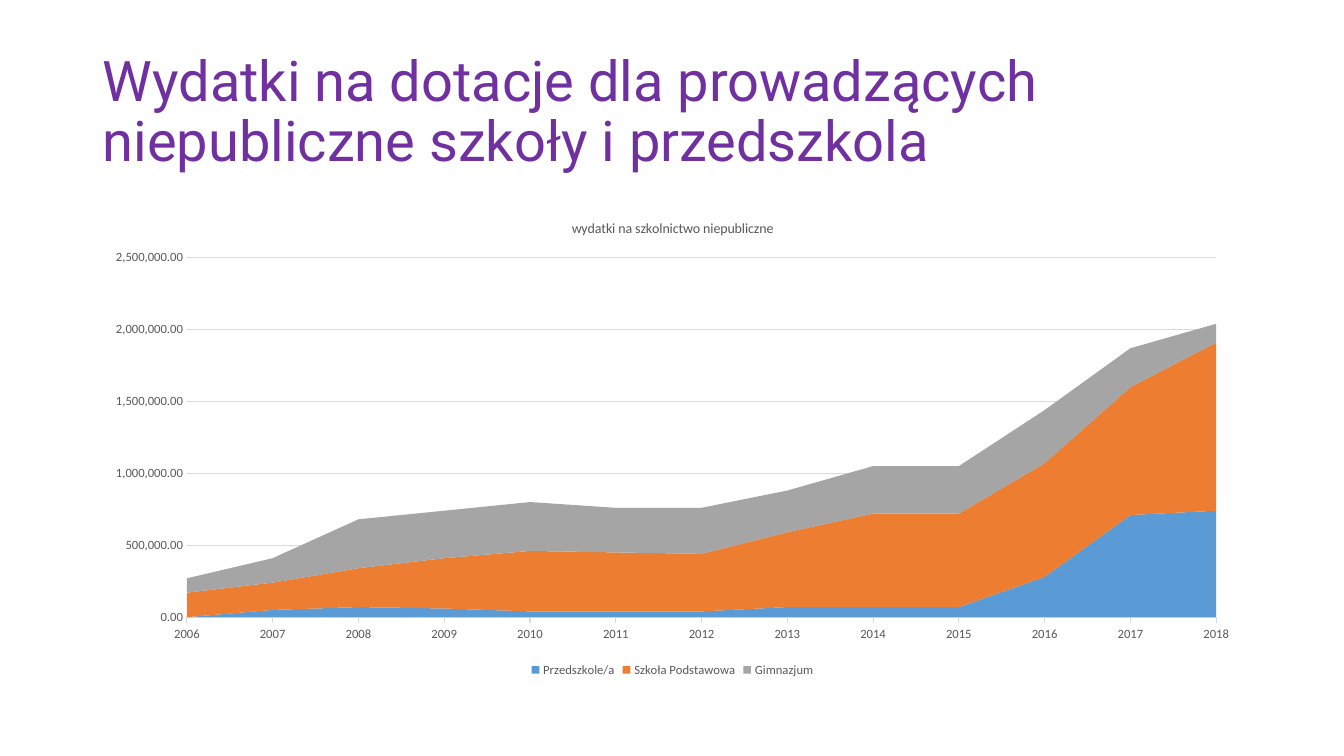
from pptx import Presentation
from pptx.chart.data import CategoryChartData
from pptx.dml.color import RGBColor
from pptx.enum.chart import XL_CHART_TYPE as ChartType, XL_LEGEND_POSITION as LegendPosition, XL_TICK_MARK as TickMark
from pptx.enum.text import MSO_ANCHOR as Anchor, MSO_AUTO_SIZE as AutoSize, PP_ALIGN as Align
from pptx.util import Inches, Pt

PURPLE = RGBColor(0x70, 0x30, 0xA0)
GRAY_TEXT = RGBColor(0x59, 0x59, 0x59)
GRAY_LINE = RGBColor(0xD9, 0xD9, 0xD9)
BLUE = RGBColor(0x5B, 0x9B, 0xD5)
ORANGE = RGBColor(0xED, 0x7D, 0x31)
GRAY = RGBColor(0xA5, 0xA5, 0xA5)

YEARS = [str(year) for year in range(2006, 2019)]
SPENDING = {
    "Przedszkole/a": (BLUE, [0, 50000, 70000, 60000, 40000, 40000, 40000, 70000, 70000,
                             70000, 280000, 710000, 740000]),
    "Szkoła Podstawowa": (ORANGE, [170000, 190000, 270000, 350000, 420000, 410000, 400000,
                                   520000, 650000, 650000, 790000, 890000, 1170000]),
    "Gimnazjum": (GRAY, [100000, 170000, 340000, 330000, 340000, 310000, 320000, 290000,
                         330000, 330000, 370000, 270000, 130000]),
}


def set_all(target, values):
    for name, value in values.items():
        setattr(target, name, value)


def set_font(font, face, size, color):
    set_all(font, {"name": face, "size": Pt(size), "bold": False})
    font.color.rgb = color


def set_line(line):
    line.color.rgb = GRAY_LINE
    line.width = Pt(0.75)


def add_heading(slide, left, top, width, height):
    heading = slide.shapes.title
    set_all(heading, {"left": left, "top": top, "width": width, "height": height})
    frame = heading.text_frame
    frame.text = "Wydatki na dotacje dla prowadzących niepubliczne szkoły i przedszkola"
    set_all(frame, {"auto_size": AutoSize.NONE, "word_wrap": True,
                    "vertical_anchor": Anchor.MIDDLE})
    paragraph = frame.paragraphs[0]
    set_all(paragraph, {"alignment": Align.LEFT, "line_spacing": 0.9})
    set_font(paragraph.runs[0].font, "Roboto", 40, PURPLE)


def add_spending_chart(slide, left, top, width, height):
    data = CategoryChartData(number_format="#,##0.00")
    data.categories = YEARS
    for school, (_, amounts) in SPENDING.items():
        data.add_series(school, amounts)
    chart = slide.shapes.add_chart(ChartType.AREA_STACKED, left, top, width, height, data).chart
    set_font(chart.font, "Calibri", 10, GRAY_TEXT)

    chart.has_title = True
    caption = chart.chart_title.text_frame
    caption.text = "wydatki na szkolnictwo niepubliczne"
    set_font(caption.paragraphs[0].runs[0].font, "Calibri", 10, GRAY_TEXT)
    chart.chart_title.include_in_layout = False

    chart.has_legend = True
    set_all(chart.legend, {"position": LegendPosition.BOTTOM, "include_in_layout": False})
    set_font(chart.legend.font, "Calibri", 9, GRAY_TEXT)

    plot = chart.plots[0]
    plot.vary_by_categories = False
    for series in plot.series:
        series.format.fill.solid()
        series.format.fill.fore_color.rgb = SPENDING[series.name][0]
        series.format.line.fill.background()

    years, amounts = chart.category_axis, chart.value_axis
    set_all(years, {"major_tick_mark": TickMark.OUTSIDE, "minor_tick_mark": TickMark.NONE,
                    "has_major_gridlines": False})
    set_all(amounts, {"major_tick_mark": TickMark.NONE, "minor_tick_mark": TickMark.NONE,
                      "has_major_gridlines": True, "minimum_scale": 0,
                      "maximum_scale": 2500000, "major_unit": 500000})
    set_all(amounts.tick_labels, {"number_format": "#,##0.00", "number_format_is_linked": False})
    for axis in (years, amounts):
        set_font(axis.tick_labels.font, "Calibri", 9, GRAY_TEXT)
    set_line(years.format.line)
    set_line(amounts.major_gridlines.format.line)
    amounts.format.line.fill.background()


def main():
    deck = Presentation()
    set_all(deck, {"slide_width": Inches(13.33), "slide_height": Inches(7.5)})
    slide = deck.slides.add_slide(deck.slide_layouts[5])
    left, width = Inches(0.92), Inches(11.5)
    add_heading(slide, left, Inches(0.4), width, Inches(1.45))
    add_spending_chart(slide, left, Inches(2), width, Inches(4.76))
    deck.save("out.pptx")


if __name__ == "__main__":
    main()
